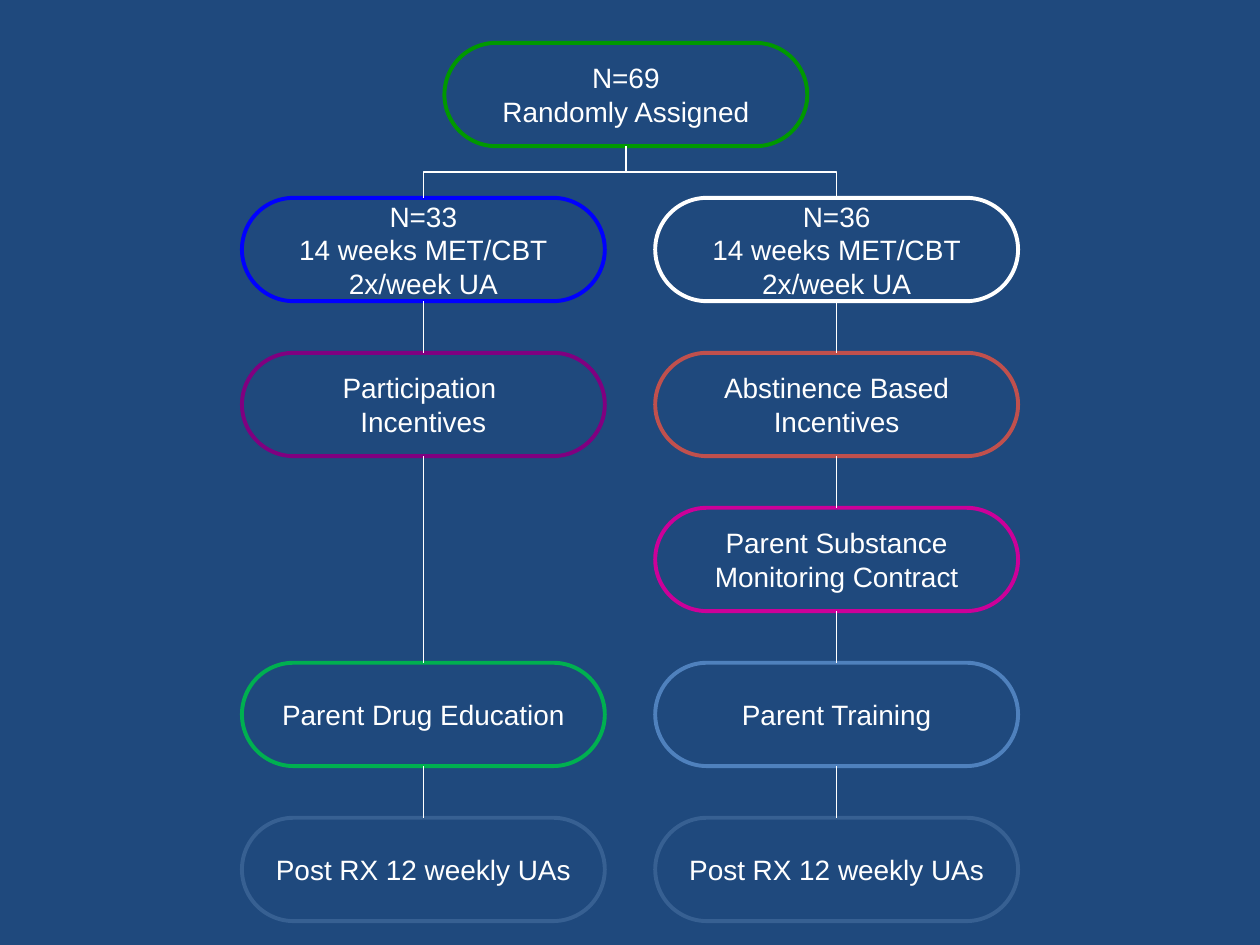
"""Build a flow chart slide of two randomly assigned treatment arms."""
from dataclasses import dataclass
from itertools import pairwise

from lxml.etree import SubElement
from pptx import Presentation
from pptx.dml.color import RGBColor
from pptx.enum.shapes import MSO_CONNECTOR, MSO_SHAPE
from pptx.enum.text import MSO_ANCHOR, PP_ALIGN
from pptx.oxml.ns import qn
from pptx.util import Inches, Pt

BOTTOM, TOP = 2, 0


@dataclass(frozen=True)
class Theme:
    """Colours, type and line sizes of the chart."""
    background: str = "1F497D"
    foreground: str = "FFFFFF"
    assigned: str = "009900"
    control: str = "0000FF"
    experimental: str = "FFFFFF"
    participation: str = "800080"
    abstinence: str = "C0504D"
    contract: str = "CC0099"
    education: str = "00B050"
    training: str = "4F81BD"
    follow_up: str = "376092"
    font: str = "Arial"
    text_size: float = 16
    outline: float = 2.25
    link: float = 0.75


@dataclass(frozen=True)
class Grid:
    """Column and row positions of the chart in inches."""
    left: float = 1.92
    top: float = 0.34
    column_pitch: float = 3.28
    row_pitch: float = 1.23
    step_width: float = 2.88
    step_height: float = 0.82

    def place(self, column, row):
        """Return left, top, width and height of a grid position."""
        return (Inches(self.left + column * self.column_pitch),
                Inches(self.top + row * self.row_pitch),
                Inches(self.step_width), Inches(self.step_height))


class FlowChart:
    """Draw steps and links on one slide in one style."""

    def __init__(self, slide, theme, grid):
        """Keep the slide and style and paint the background."""
        self.slide, self.theme, self.grid = slide, theme, grid
        fill = slide.background.fill
        fill.solid()
        fill.fore_color.rgb = RGBColor.from_string(theme.background)

    def step(self, column, row, wording, colour):
        """Add an outlined, fully rounded step with centred text."""
        step = self.slide.shapes.add_shape(
            MSO_SHAPE.ROUNDED_RECTANGLE, *self.grid.place(column, row))
        step.adjustments[0] = 0.5
        step.shadow.inherit = False
        step.fill.background()
        step.line.color.rgb = RGBColor.from_string(colour)
        step.line.width = Pt(self.theme.outline)
        frame = step.text_frame
        frame.text = wording
        frame.word_wrap = False
        frame.vertical_anchor = MSO_ANCHOR.MIDDLE
        frame.margin_left = frame.margin_right = 0
        frame.margin_top = frame.margin_bottom = 0
        for paragraph in frame.paragraphs:
            paragraph.alignment = PP_ALIGN.CENTER
            for run in paragraph.runs:
                run.font.name = self.theme.font
                run.font.size = Pt(self.theme.text_size)
                run.font.color.rgb = RGBColor.from_string(self.theme.foreground)
        return step

    def link(self, upper, lower, kind=MSO_CONNECTOR.STRAIGHT):
        """Join the bottom of one step to the top of another."""
        link = self.slide.shapes.add_connector(kind, 0, 0, 0, 0)
        link.begin_connect(upper, BOTTOM)
        link.end_connect(lower, TOP)
        link.line.color.rgb = RGBColor.from_string(self.theme.foreground)
        link.line.width = Pt(self.theme.link)
        SubElement(link._element.spPr, qn("a:effectLst"))
        return link

    def branch(self, upper, lower):
        """Join two steps by an elbow that leaves and arrives vertically."""
        branch = self.link(upper, lower, MSO_CONNECTOR.ELBOW)
        leftward = branch.end_x < branch.begin_x
        left, top, width, height = branch.left, branch.top, branch.width, branch.height
        branch.left = left + (width - height) // 2
        branch.top = top + (height - width) // 2
        branch.width, branch.height = height, width
        transform = branch._element.spPr.find(qn("a:xfrm"))
        transform.set("rot", "5400000" if leftward else "16200000")
        transform.set("flipH", "0" if leftward else "1")

    def arm(self, root, column, stages):
        """Add a column of steps below the root and link them in order."""
        steps = [self.step(column, row, wording, colour)
                 for row, wording, colour in stages]
        self.branch(root, steps[0])
        for upper, lower in pairwise(steps):
            self.link(upper, lower)


def main():
    """Build and save the slide."""
    theme = Theme()
    deck = Presentation()
    deck.slide_width, deck.slide_height = Inches(10), Inches(7.5)
    chart = FlowChart(deck.slides.add_slide(deck.slide_layouts[6]), theme, Grid())

    treatment = "14 weeks MET/CBT\n2x/week UA"
    follow_up = (5, "Post RX 12 weekly UAs", theme.follow_up)
    assigned = chart.step(0.49, 0, "N=69\nRandomly Assigned", theme.assigned)
    chart.arm(assigned, 0, [
        (1, f"N=33\n{treatment}", theme.control),
        (2, "Participation \nIncentives", theme.participation),
        (4, "Parent Drug Education", theme.education),
        follow_up,
    ])
    chart.arm(assigned, 1, [
        (1, f"N=36\n{treatment}", theme.experimental),
        (2, "Abstinence Based\nIncentives", theme.abstinence),
        (3, "Parent Substance\nMonitoring Contract", theme.contract),
        (4, "Parent Training", theme.training),
        follow_up,
    ])
    deck.save("out.pptx")


if __name__ == "__main__":
    main()
